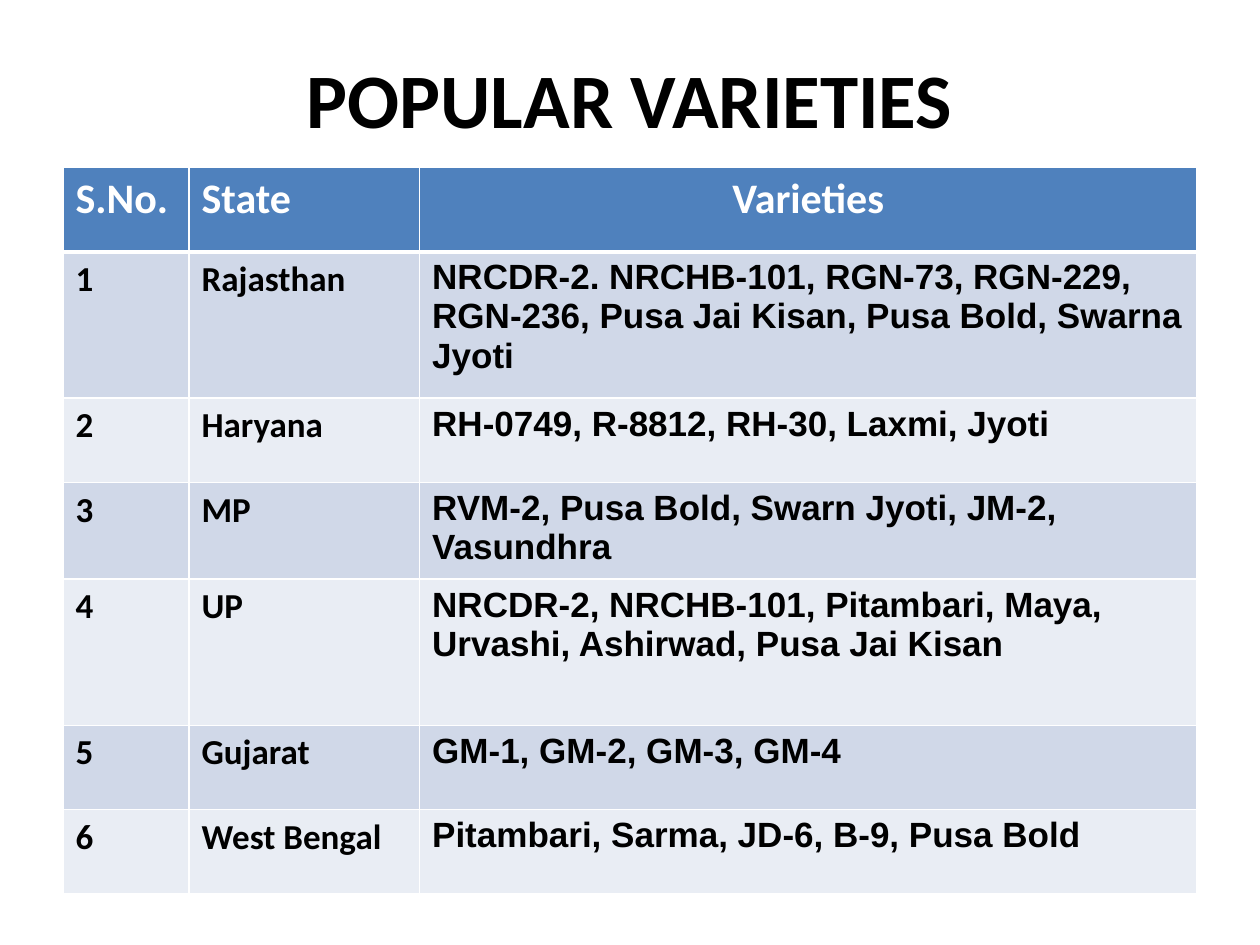
"""Build a slide with a table of popular varieties by state."""
from dataclasses import dataclass

from lxml import etree
from pptx import Presentation
from pptx.dml.color import RGBColor
from pptx.enum.text import MSO_ANCHOR, PP_ALIGN
from pptx.oxml.ns import qn
from pptx.util import Inches, Pt

CENTER, JUSTIFY = PP_ALIGN.CENTER, PP_ALIGN.JUSTIFY
MIDDLE = MSO_ANCHOR.MIDDLE


@dataclass(frozen=True)
class Theme:
    ink: str = "000000"
    white: str = "FFFFFF"
    head: str = "4F81BD"
    bands: tuple = ("E9EDF4", "D0D8E8")
    sans: str = "Calibri"
    list: str = "Arial"
    title: int = 44
    label: int = 24
    body: int = 20


theme = Theme()


def write(frame, text, size, color, font, align=None):
    para = frame.paragraphs[0]
    para.alignment = align
    run = para.add_run()
    run.text = text
    run.font.size = Pt(size)
    run.font.bold = True
    run.font.name = font
    run.font.color.rgb = RGBColor.from_string(color)


def edge(cell, bottom):
    props = cell._tc.get_or_add_tcPr()
    for spot, side in enumerate("LRTB"):
        width = bottom if side == "B" else 1
        line = etree.Element(qn(f"a:ln{side}"), w=str(Pt(width)))
        fill = etree.SubElement(line, qn("a:solidFill"))
        etree.SubElement(fill, qn("a:srgbClr"), val=theme.white)
        props.insert(spot, line)


deck = Presentation()
deck.slide_width, deck.slide_height = Inches(10), Inches(7.5)
slide = deck.slides.add_slide(deck.slide_layouts[6])

title = slide.shapes.add_textbox(Inches(0.5), Inches(0.3), Inches(9), Inches(0.95))
title.text_frame.word_wrap = True
title.text_frame.vertical_anchor = MIDDLE
write(title.text_frame, "POPULAR VARIETIES", theme.title, theme.ink, theme.sans, CENTER)

rows = [
    ("S.No.", "State", "Varieties"),
    ("1", "Rajasthan", "NRCDR-2. NRCHB-101, RGN-73, RGN-229, RGN-236, "
     "Pusa Jai Kisan, Pusa Bold, Swarna Jyoti"),
    ("2", "Haryana", "RH-0749, R-8812, RH-30, Laxmi, Jyoti"),
    ("3", "MP", "RVM-2, Pusa Bold, Swarn Jyoti, JM-2, Vasundhra"),
    ("4", "UP", "NRCDR-2, NRCHB-101, Pitambari, Maya, Urvashi, "
     "Ashirwad, Pusa Jai Kisan"),
    ("5", "Gujarat", "GM-1, GM-2, GM-3, GM-4"),
    ("6", "West Bengal", "Pitambari, Sarma, JD-6, B-9, Pusa Bold"),
]
widths = (1, 1.83, 6.17)
short, tall = 0.67, 1.16
heights = [tall if row[1] in ("Rajasthan", "UP") else short for row in rows]
aligns = {(0, 2): CENTER, (5, 2): JUSTIFY}

table = slide.shapes.add_table(
    len(rows), len(widths), Inches(0.5), Inches(1.33),
    Inches(sum(widths)), Inches(sum(heights))).table
for col, width in zip(table.columns, widths):
    col.width = Inches(width)

for r, row in enumerate(rows):
    table.rows[r].height = Inches(heights[r])
    top = r == 0
    size = theme.label if top else theme.body
    color = theme.white if top else theme.ink
    shade = theme.head if top else theme.bands[r % 2]
    for c, text in enumerate(row):
        cell = table.cell(r, c)
        font = theme.list if c == 2 and not top else theme.sans
        cell.fill.solid()
        cell.fill.fore_color.rgb = RGBColor.from_string(shade)
        edge(cell, 3 if top else 1)
        write(cell.text_frame, text, size, color, font, aligns.get((r, c)))

deck.save("out.pptx")
